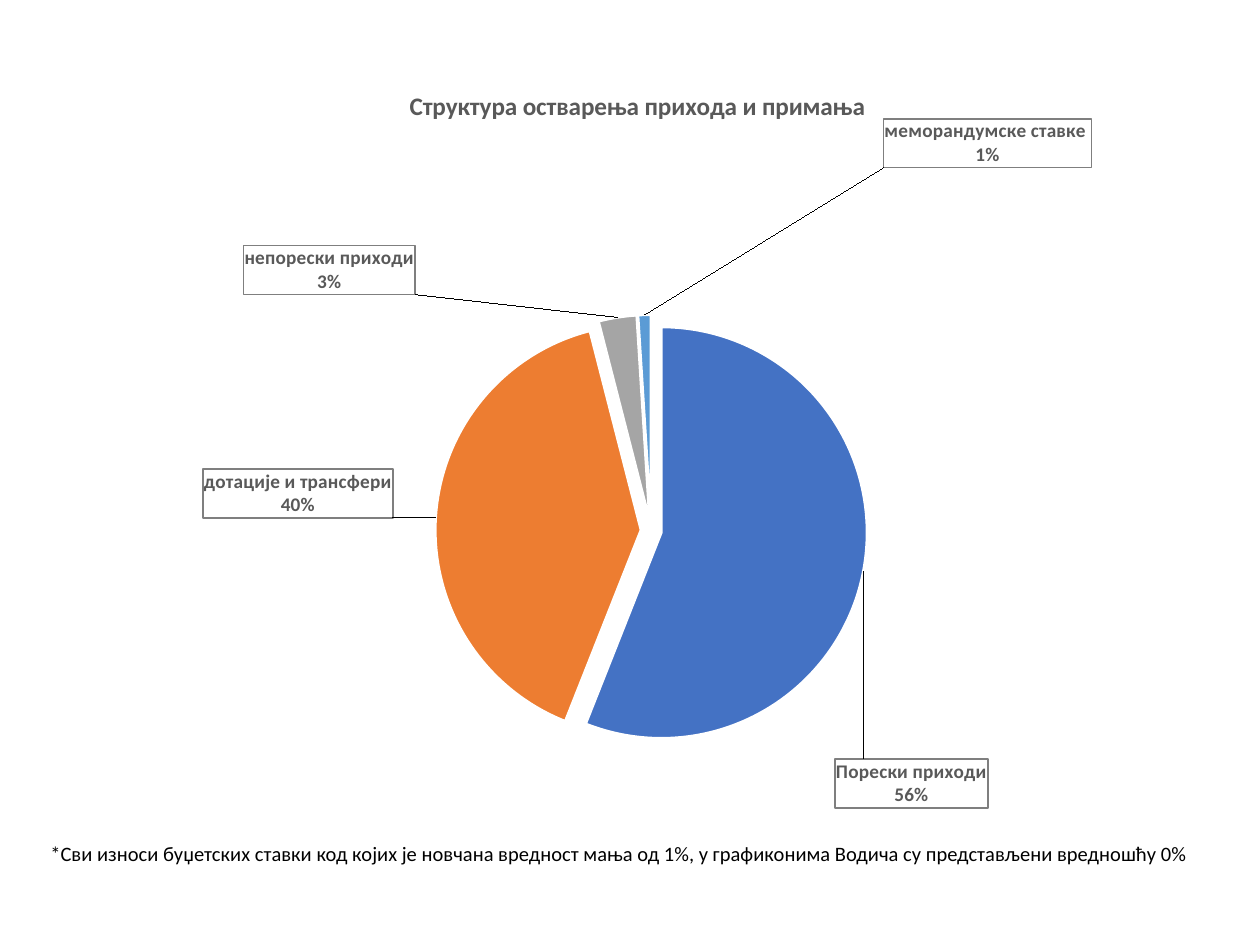
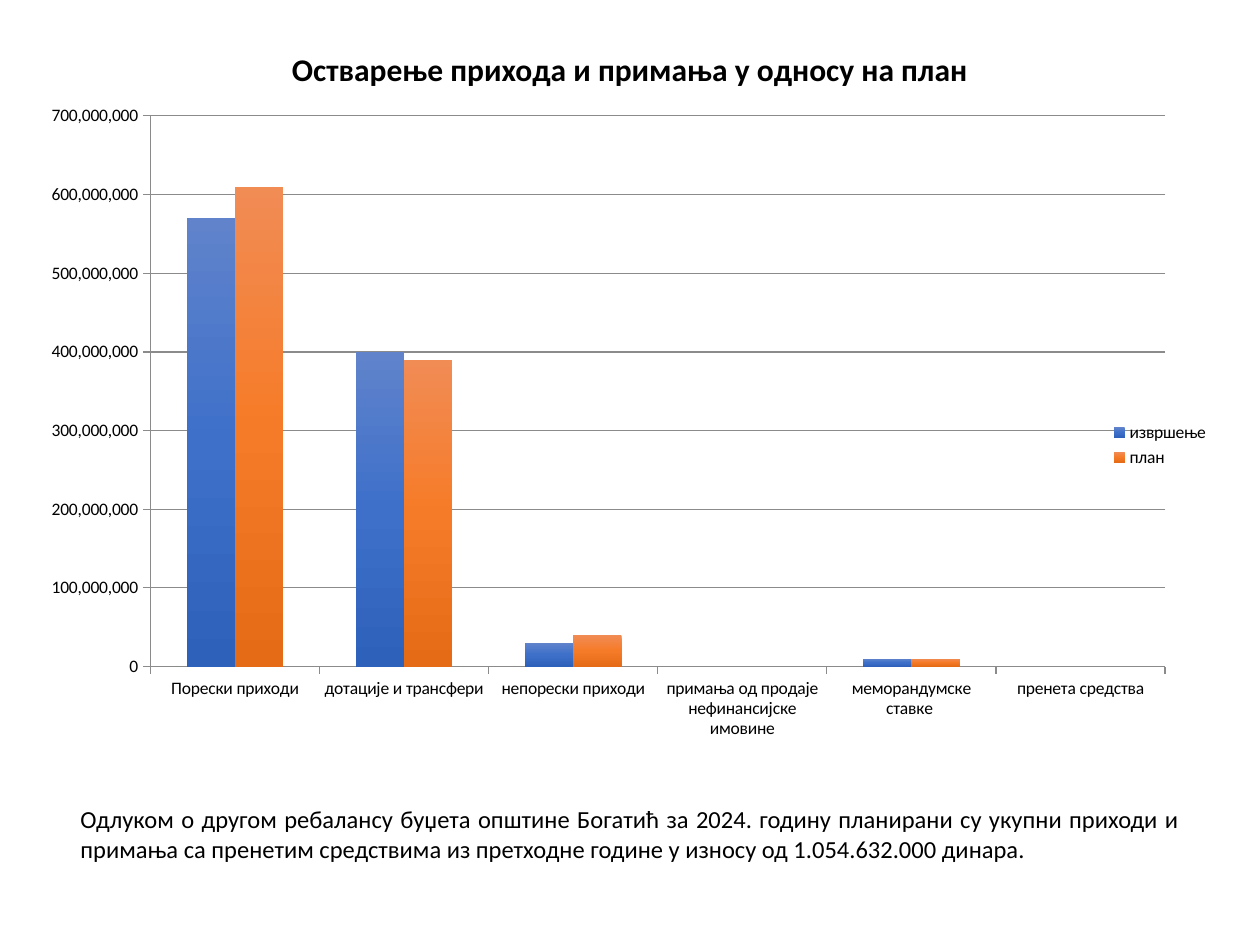
from pptx import Presentation
from pptx.chart.data import CategoryChartData
from pptx.dml.color import RGBColor
from pptx.enum.chart import XL_CHART_TYPE as Kind, XL_LEGEND_POSITION as Side, XL_TICK_MARK as Tick
from pptx.enum.text import MSO_ANCHOR as Anchor, PP_ALIGN as Align
from pptx.oxml import parse_xml
from pptx.oxml.ns import nsdecls, qn
from pptx.util import Pt

PX = 914400 / 126
FONT = "Calibri"
BLACK = RGBColor(0x00, 0x00, 0x00)
WHITE = RGBColor(0xFF, 0xFF, 0xFF)
DARK = RGBColor(0x59, 0x59, 0x59)
GREY = RGBColor(0x7F, 0x7F, 0x7F)
RULE = RGBColor(0x8B, 0x8B, 0x8B)
SLICES = [RGBColor.from_string(c) for c in
          ("4472C4", "ED7D31", "A5A5A5", "FFC000", "5B9BD5", "70AD47")]
BARS = [[RGBColor.from_string(c) for c in shades] for shades in
        (("6083CB", "3E70CA", "2E61BA"), ("F18C55", "F67B28", "E56B17"))]

CATS = ["Порески приходи", "дотације и трансфери", "непорески приходи",
        "примања од продаје нефинансијске имовине", "меморандумске ставке ",
        "пренета средства"]
SHARES = [56, 40, 3, 0, 1, 0]
DONE = [570000000, 400000000, 30000000, 0, 10000000, 0]
PLAN = [610000000, 390000000, 40000000, 0, 10000000, 0]
# Label shifts from the outer end of a slice, as shares of the chart size
SHIFTS = {0: (-0.03, 0.24), 1: (-0.03, -0.03), 2: (-0.17, -0.02), 4: (0.29, -0.18)}


def emu(box):
    return [int(n * PX) for n in box]


def xml(tag, body):
    return parse_xml(f"<c:{tag} {nsdecls('c', 'a')}>{body}</c:{tag}>")


def layout(x, y, size=None):
    """Manual layout in shares of the chart; a size makes it an inner plot box."""
    vals = [("x", x), ("y", y)]
    body = ""
    if size:
        body = '<c:layoutTarget val="inner"/><c:xMode val="edge"/><c:yMode val="edge"/>'
        vals += zip("wh", size)
    body += "".join(f'<c:{k} val="{v}"/>' for k, v in vals)
    return f"<c:manualLayout>{body}</c:manualLayout>"


def drop(node, tag):
    for old in node.findall(qn(tag)):
        node.remove(old)


def add_text(slide, box, text, size, align, bold=False, anchor=Anchor.TOP, space=1.0):
    frame = slide.shapes.add_textbox(*emu(box)).text_frame
    frame.word_wrap = True
    frame.vertical_anchor = anchor
    par = frame.paragraphs[0]
    par.alignment = align
    par.line_spacing = space
    run = par.add_run()
    run.text = text
    font = run.font
    font.name, font.size, font.bold = FONT, Pt(size), bold
    font.color.rgb = BLACK


def add_chart(slide, box, kind, rows, plot):
    data = CategoryChartData(number_format="#,##0")
    data.categories = CATS
    for name, vals in rows:
        data.add_series(name, vals)
    chart = slide.shapes.add_chart(kind, *emu(box), data).chart
    chart.font.name, chart.font.size = FONT, Pt(10)
    chart.font.color.rgb = BLACK
    area = chart._chartSpace.chart.plotArea
    drop(area, "c:layout")
    area.insert(0, xml("layout", layout(*plot[:2], plot[2:])))
    return chart


def add_head(chart, text):
    chart.has_title = True
    run = chart.chart_title.text_frame.paragraphs[0].add_run()
    run.text = text
    font = run.font
    font.name, font.size, font.bold = FONT, Pt(14.4), True
    font.color.rgb = DARK
    title = chart.chart_title._element
    drop(title, "c:layout")
    mode = '<c:xMode val="edge"/><c:yMode val="edge"/>'
    spot = layout(0.31, 0.04).replace("<c:x ", mode + "<c:x ")
    title.find(qn("c:tx")).addnext(xml("layout", spot))


def label_xml(index):
    """Boxed label with category and percent, or none for an empty slice."""
    head = f'<c:idx val="{index}"/>'
    if index not in SHIFTS:
        return f'<c:dLbl>{head}<c:delete val="1"/></c:dLbl>'
    return f"<c:dLbl>{head}<c:layout>{layout(*SHIFTS[index])}</c:layout>{style_xml()}</c:dLbl>"


def style_xml():
    def fill(color):
        return f'<a:solidFill><a:srgbClr val="{color}"/></a:solidFill>'
    shows = zip(("LegendKey", "Val", "CatName", "SerName", "Percent", "BubbleSize"),
                (0, 0, 1, 0, 1, 0))
    flags = "".join(f'<c:show{name} val="{on}"/>' for name, on in shows)
    return (f'<c:numFmt formatCode="0%" sourceLinked="0"/>'
            f'<c:spPr>{fill(WHITE)}<a:ln w="12700">{fill(GREY)}</a:ln></c:spPr>'
            f'<c:txPr><a:bodyPr/><a:p><a:pPr><a:defRPr sz="1100" b="1">{fill(DARK)}'
            f'<a:latin typeface="{FONT}"/></a:defRPr></a:pPr>'
            f'<a:endParaRPr lang="sr-Cyrl-RS"/></a:p></c:txPr>'
            f'<c:dLblPos val="outEnd"/>{flags}<c:separator>\n</c:separator>')


def add_pie(slide, box):
    chart = add_chart(slide, box, Kind.PIE, [("Series 1", SHARES)],
                      (0.204, 0.337, 0.628, 0.556))
    chart.has_legend = False
    add_head(chart, "Структура остварења прихода и примања")
    plot = chart.plots[0]
    plot.vary_by_categories = True
    row = plot.series[0]
    for i, color in enumerate(SLICES):
        form = row.points[i].format
        form.fill.solid()
        form.fill.fore_color.rgb = color
        form.line.color.rgb = WHITE
        form.line.width = Pt(1.5)
    ser = row._element
    ser.find(qn("c:dPt")).addprevious(parse_xml(f'<c:explosion {nsdecls("c")} val="5"/>'))
    labels = "".join(map(label_xml, range(len(CATS)))) + style_xml()
    ser.find(qn("c:cat")).addprevious(xml("dLbls", labels))


def shade(row, colors):
    stops = "".join(f'<a:gs pos="{pos}"><a:srgbClr val="{color}"/></a:gs>'
                    for pos, color in zip((0, 50000, 100000), colors))
    fill = row.format.fill
    fill.gradient()
    grad = row._element.find(qn("c:spPr")).find(qn("a:gradFill"))
    grad.getparent().replace(grad, parse_xml(
        f'<a:gradFill {nsdecls("a")} rotWithShape="1"><a:gsLst>{stops}</a:gsLst>'
        f'<a:lin ang="5400000" scaled="0"/></a:gradFill>'))


def add_bars(slide, box):
    chart = add_chart(slide, box, Kind.COLUMN_CLUSTERED,
                      [("извршење", DONE), ("план", PLAN)],
                      (0.095, 0.016, 0.857, 0.81))
    chart.has_title = False
    chart.has_legend = True
    chart.legend.position = Side.RIGHT
    chart.legend.include_in_layout = False
    plot = chart.plots[0]
    plot.vary_by_categories = False
    plot.gap_width, plot.overlap = 150, 0
    for row, colors in zip(plot.series, BARS):
        shade(row, colors)
    cat, val = chart.category_axis, chart.value_axis
    for axis in (cat, val):
        axis.major_tick_mark = Tick.OUTSIDE
        axis.minor_tick_mark = Tick.NONE
        axis.format.line.color.rgb = RULE
    val.minimum_scale, val.maximum_scale, val.major_unit = 0, 700000000, 100000000
    val.tick_labels.number_format = "#,##0"
    val.tick_labels.number_format_is_linked = False
    val.has_major_gridlines = True
    val.major_gridlines.format.line.color.rgb = RULE


def share_slide(slide):
    add_pie(slide, (38, 53, 1184, 777))
    add_text(slide, (38, 811, 1184, 61),
             "*Сви износи буџетских ставки код којих је новчана вредност мања од 1%, "
             "у графиконима Водича су представљени вредношћу 0%",
             11.7, Align.JUSTIFY, anchor=Anchor.BOTTOM, space=0.9)


def plan_slide(slide):
    add_text(slide, (38, 32, 1184, 63), "Остварење прихода и примања у односу на план",
             18, Align.CENTER, bold=True, anchor=Anchor.BOTTOM, space=0.9)
    add_text(slide, (68, 798, 1124, 72),
             "Одлуком о другом ребалансу буџета општине Богатић за 2024. годину "
             "планирани су укупни приходи и примања са пренетим средствима из "
             "претходне године у износу од 1.054.632.000 динара.",
             14, Align.JUSTIFY)
    add_bars(slide, (38, 105, 1184, 680))


def main():
    deck = Presentation()
    deck.slide_width, deck.slide_height = emu((1260, 945))
    for build in (share_slide, plan_slide):
        build(deck.slides.add_slide(deck.slide_layouts[6]))
    deck.save("out.pptx")


if __name__ == "__main__":
    main()
